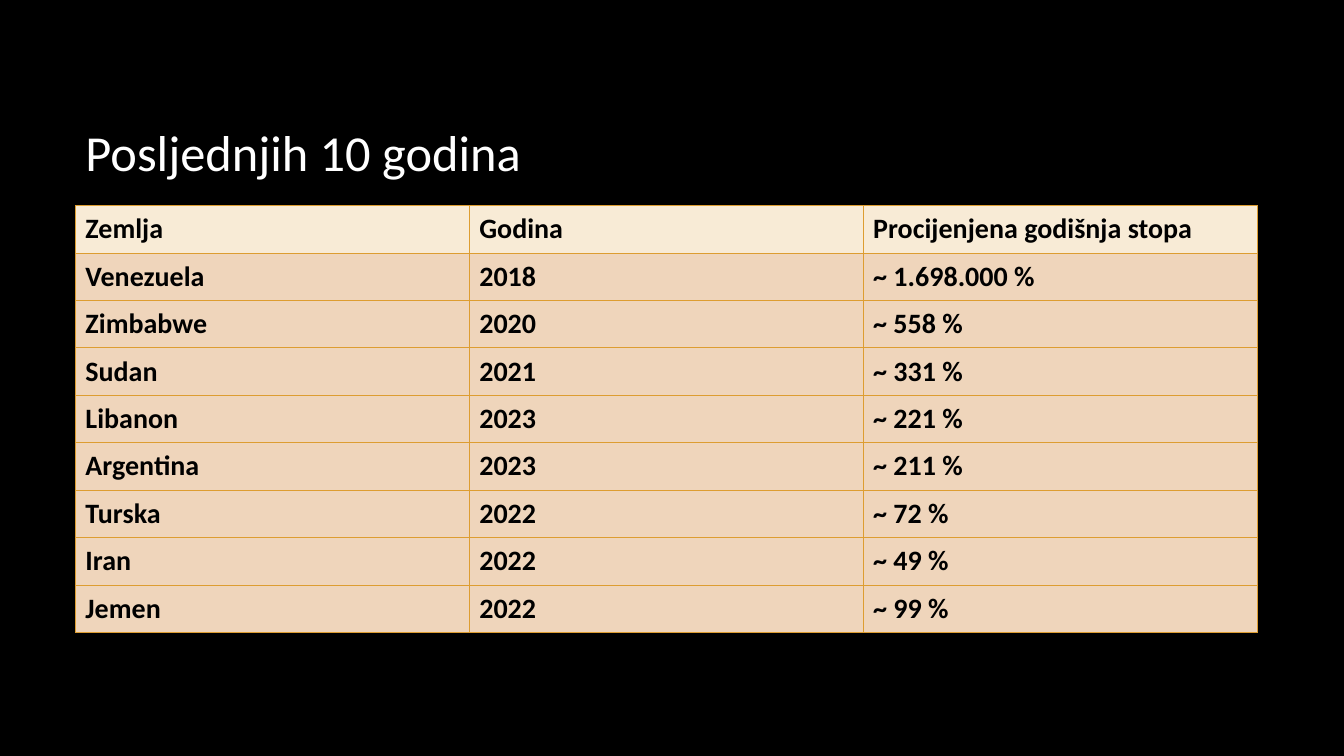
from pptx import Presentation
from pptx.dml.color import RGBColor
from pptx.enum.text import MSO_ANCHOR, PP_ALIGN
from pptx.oxml import parse_xml
from pptx.oxml.ns import nsdecls
from pptx.util import Cm, Pt

BLACK = RGBColor(0x00, 0x00, 0x00)
WHITE = RGBColor(0xFF, 0xFF, 0xFF)
CREAM = RGBColor(0xF8, 0xEB, 0xD6)
PEACH = RGBColor(0xEF, 0xD5, 0xBB)
GOLD = RGBColor(0xDD, 0x9D, 0x31)

ROWS = [
    ("Zemlja", "Godina", "Procijenjena godišnja stopa"),
    ("Venezuela", "2018", "~ 1.698.000 %"),
    ("Zimbabwe", "2020", "~ 558 %"),
    ("Sudan", "2021", "~ 331 %"),
    ("Libanon", "2023", "~ 221 %"),
    ("Argentina", "2023", "~ 211 %"),
    ("Turska", "2022", "~ 72 %"),
    ("Iran", "2022", "~ 49 %"),
    ("Jemen", "2022", "~ 99 %"),
]


def write(frame, text, size, color, bold):
    frame.text = text
    part = frame.paragraphs[0]
    part.alignment = PP_ALIGN.LEFT
    font = part.runs[0].font
    for name, value in {"name": "Calibri", "size": Pt(size), "bold": bold}.items():
        setattr(font, name, value)
    font.color.rgb = color


def border(cell):
    props = cell._tc.get_or_add_tcPr()
    for side in ("lnL", "lnR", "lnT", "lnB"):
        props.append(parse_xml(
            f'<a:{side} {nsdecls("a")} w="{Pt(0.75)}"><a:solidFill>'
            f'<a:srgbClr val="{GOLD}"/></a:solidFill></a:{side}>'))


deck = Presentation()
deck.slide_width, deck.slide_height = Cm(33.87), Cm(19.05)
slide = deck.slides.add_slide(deck.slide_layouts[5])
slide.background.fill.solid()
slide.background.fill.fore_color.rgb = BLACK

title = slide.shapes.title
title.left, title.top, title.width, title.height = Cm(1.9), Cm(2.82), Cm(28.14), Cm(2)
write(title.text_frame, "Posljednjih 10 godina", 36, WHITE, False)
title.text_frame.vertical_anchor = MSO_ANCHOR.MIDDLE

table = slide.shapes.add_table(
    len(ROWS), len(ROWS[0]), Cm(1.9), Cm(5.18), Cm(29.78), Cm(10.76)).table
for r, row in enumerate(ROWS):
    for c, text in enumerate(row):
        cell = table.cell(r, c)
        border(cell)
        cell.fill.solid()
        cell.fill.fore_color.rgb = PEACH if r else CREAM
        cell.vertical_anchor = MSO_ANCHOR.MIDDLE
        write(cell.text_frame, text, 20, BLACK, True)

deck.save("out.pptx")
